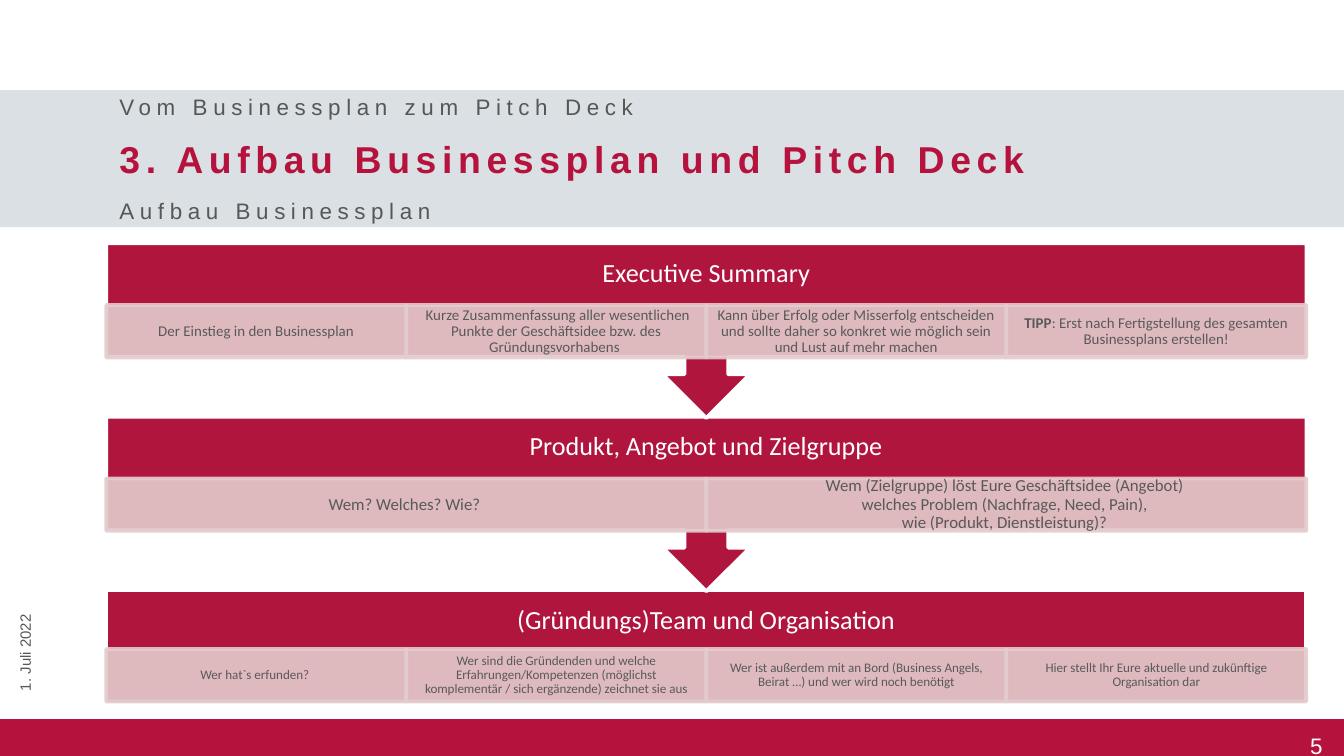
from pptx import Presentation
from pptx.dml.color import RGBColor
from pptx.enum.shapes import MSO_SHAPE as Shape
from pptx.enum.text import MSO_ANCHOR as Anchor, PP_ALIGN as Align
from pptx.oxml.ns import qn
from pptx.util import Inches, Pt
from lxml.etree import SubElement

# Content: heading, cell type size, cell side inset, cells (each a list of runs)
STAGES = [
    ("Executive Summary", 8, 0.06, [
        ["Der Einstieg in den Businessplan"],
        [" Kurze Zusammenfassung aller wesentlichen Punkte der Geschäftsidee "
         "bzw. des Gründungsvorhabens "],
        ["Kann über Erfolg oder Misserfolg entscheiden und sollte daher so "
         "konkret wie möglich sein und Lust auf mehr machen"],
        [("TIPP", True), ": Erst nach Fertigstellung des gesamten Businessplans erstellen!"],
    ]),
    ("Produkt, Angebot und Zielgruppe", 9, 0.07, [
        ["Wem? Welches? Wie? "],
        ["Wem (Zielgruppe) löst Eure Geschäftsidee (Angebot) \n"
         "welches Problem (Nachfrage, Need, Pain), \n"
         "wie (Produkt, Dienstleistung)? "],
    ]),
    ("(Gründungs)Team und Organisation", 7, 0.06, [
        ["Wer hat`s erfunden? "],
        ["Wer sind die Gründenden und welche Erfahrungen/Kompetenzen (möglichst "
         "komplementär / sich ergänzende) zeichnet sie aus"],
        ["Wer ist außerdem mit an Bord (Business Angels, Beirat …) und wer wird noch benötigt"],
        ["Hier stellt Ihr Eure aktuelle und zukünftige Organisation dar"],
    ]),
]
# Heading lines: text, top, height, theme size, theme colour, bold
HEADINGS = [
    ("3. Aufbau Businessplan und Pitch Deck", 0.96, 0.44, "title", "red", True),
    ("Aufbau Businessplan", 1.42, 0.3, "subtitle", "grey", False),
    ("Vom Businessplan zum Pitch Deck", 0.72, 0.15, "subtitle", "grey", False),
]
THEME = {
    "red": "B5123E", "block": "B0153E", "cell": "E4CCCE", "band": "DAE0E3",
    "white": "FFFFFF", "grey": "575756", "cell_text": "595959",
    "title": 20, "subtitle": 12, "stage": 14, "date": 8, "number": 12,
    "font": "Arial", "diagram_font": "Calibri",
}

# Slide in 16:9 and diagram grid
WIDTH = 10
HEIGHT = WIDTH * 9 / 16
LEFT, TOP, DIAGRAM_W = 0.79, 1.81, 8.93
PITCH, CALLOUT_H, BLOCK_H = 1.29, 1.3, 0.85
HEADER_H, CELL_H = 0.46, 0.39

deck = Presentation()
deck.slide_width, deck.slide_height = Inches(WIDTH), Inches(HEIGHT)
page = deck.slides.add_slide(deck.slide_layouts[6])


def color(name):
    return RGBColor.from_string(THEME[name])


def add_block(kind, area, fill, line=None, opacity=None):
    block = page.shapes.add_shape(kind, *map(Inches, area))
    block.shadow.inherit = False
    block.fill.solid()
    block.fill.fore_color.rgb = color(fill)
    if line:
        block.line.color.rgb = color(line)
        block.line.width = Pt(2)
    else:
        block.line.fill.background()
    if opacity:
        for tint in block._element.spPr.iter(qn("a:srgbClr")):
            SubElement(tint, qn("a:alpha"), val=str(opacity * 1000))
    return block


def add_box(area):
    return page.shapes.add_textbox(*map(Inches, area))


def write(box, runs, *, size, ink, font="font", align=Align.LEFT, anchor=Anchor.MIDDLE,
          inset=(0.1, 0.05), leading=None, bold=False, tracking=0):
    frame = box.text_frame
    frame.word_wrap = True
    frame.vertical_anchor = anchor
    frame.margin_left = frame.margin_right = Inches(inset[0])
    frame.margin_top = frame.margin_bottom = Inches(inset[1])
    para = frame.paragraphs[0]
    para.alignment = align
    if leading:
        para.line_spacing = leading
    for run in runs:
        text, strong = (run, bold) if isinstance(run, str) else run
        for row, words in enumerate(text.split("\n")):
            if row:
                para.add_line_break()
            span = para.add_run()
            span.text = words
            span.font.size, span.font.bold = Pt(size), strong
            span.font.name = THEME[font]
            span.font.color.rgb = color(ink)
            if tracking:
                span._r.get_or_add_rPr().set("spc", str(tracking * 100))


# Footer bar, page number and heading band
add_block(Shape.RECTANGLE, (0, 5.35, WIDTH, HEIGHT - 5.35), "red")
write(add_box((8.58, 5.26, 1.26, 0.39)), ["5"], size=THEME["number"], ink="white",
      align=Align.RIGHT, inset=(0, 0), leading=Pt(28))
add_block(Shape.RECTANGLE, (0, 0.67, WIDTH, 1.02), "band")

# Stages from the bottom up, so that each arrow lies over the next block
diagram_text = dict(font="diagram_font", align=Align.CENTER, leading=0.9)
last = len(STAGES) - 1
for index, (heading, size, side, cells) in reversed(list(enumerate(STAGES))):
    top = TOP + index * PITCH
    if index == last:
        add_block(Shape.RECTANGLE, (LEFT, top, DIAGRAM_W, BLOCK_H), "block", "white")
    else:
        callout = add_block(Shape.UP_ARROW_CALLOUT, (LEFT, top, DIAGRAM_W, CALLOUT_H),
                            "block", "white")
        callout.rotation = 180
    write(add_box((LEFT, top, DIAGRAM_W, HEADER_H)), [heading], size=THEME["stage"],
          ink="white", inset=(0.11, 0.11), **diagram_text)
    cell_top = top + (0.44 if index == last else HEADER_H)
    cell_w = DIAGRAM_W / len(cells)
    for column, runs in enumerate(cells):
        cell = add_block(Shape.RECTANGLE, (LEFT + column * cell_w, cell_top, cell_w, CELL_H),
                         "cell", "cell", opacity=90)
        write(cell, runs, size=size, ink="cell_text", inset=(side, 0.01), **diagram_text)

# Title lines
for text, top, height, size, ink, bold in HEADINGS:
    write(add_box((LEFT, top, WIDTH - LEFT, height)), [text], size=THEME[size],
          ink=ink, bold=bold, tracking=3)

# Date along the left edge
date = add_box((-0.42, 4.51, 1.22, 0.24))
date.rotation = 270
write(date, ["1. Juli 2022"], size=THEME["date"], ink="grey", anchor=Anchor.TOP)

deck.save("out.pptx")
